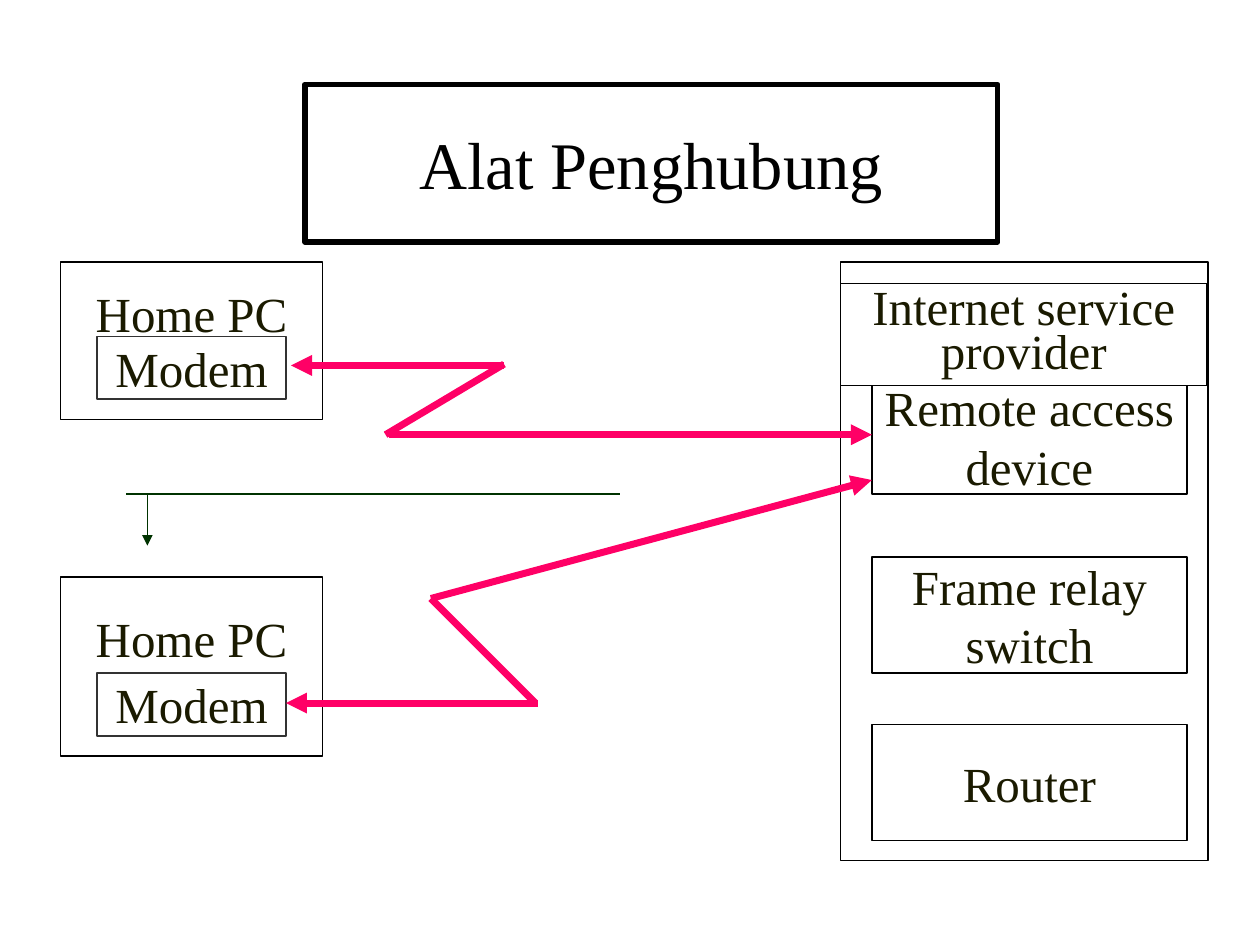
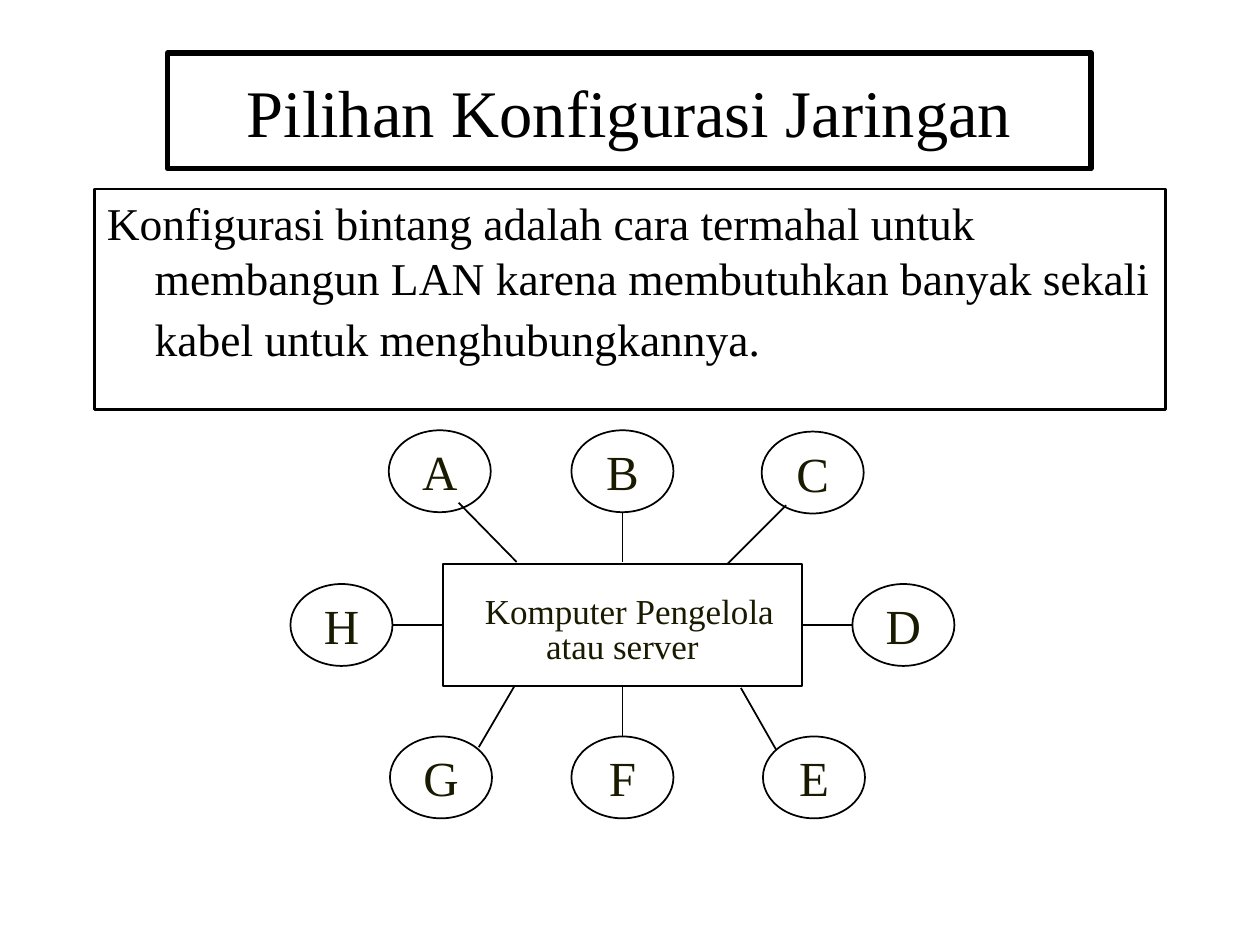
import pptx
import pptx.util
import pptx.dml.color
import pptx.enum.shapes
import pptx.enum.text
import lxml.etree
from pptx.oxml.ns import qn

FONT = "Times New Roman"
BLACK, WHITE, INK, GREY, GREEN, PINK = (
    "000000", "FFFFFF", "1A1A00", "333333", "003300", "FF0066")
RECT = pptx.enum.shapes.MSO_SHAPE.RECTANGLE
OVAL = pptx.enum.shapes.MSO_SHAPE.OVAL
LEFT, CENTER = pptx.enum.text.PP_ALIGN.LEFT, pptx.enum.text.PP_ALIGN.CENTER
TOP, MIDDLE = pptx.enum.text.MSO_ANCHOR.TOP, pptx.enum.text.MSO_ANCHOR.MIDDLE
LABEL_SIZE = 28
LINE_HEIGHT = 0.45  # one label line, in inches

# Slide 1: devices that connect home computers to a provider
DEVICES_TITLE = ("Alat Penghubung", (2.42, 0.67, 5.5, 1.25))
HOME_PCS = [(2.08, 1.25), (4.58, 1.42)]  # top, height
PC_LEFT, PC_WIDTH = 0.48, 2.08
MODEM_WIDTH, MODEM_HEIGHT, MODEM_GAP = 1.5, 0.5, 0.16
PROVIDER_FRAME = (6.67, 2.08, 2.92, 4.75)
PROVIDER_NAME = ("Internet service provider", (6.67, 2.25, 2.91, 0.81))
PROVIDER_DEVICES = [
    (3.0, ["Remote access", "device"]),
    (4.42, ["Frame relay", "switch"]),
    (5.75, ["Router"]),
]
DEVICE_LEFT, DEVICE_WIDTH, DEVICE_HEIGHT = 6.92, 2.5, 0.92
BUS = [((1, 3.92), (4.92, 3.92), None), ((1.17, 3.92), (1.17, 4.33), "tail")]
LINKS = [  # start, end, arrowhead
    ((2.31, 2.9), (4.0, 2.9), "head"),
    ((3.06, 3.45), (4.0, 2.89), None),
    ((3.09, 3.45), (DEVICE_LEFT, 3.45), "tail"),
    ((2.27, 5.58), (4.27, 5.58), "head"),
    ((3.42, 4.75), (4.25, 5.58), None),
    ((3.42, 4.75), (DEVICE_LEFT, 3.81), "tail"),
]

# Slide 2: star network
STAR_TITLE = ("Pilihan Konfigurasi Jaringan", (1.33, 0.42, 7.33, 0.92))
STAR_TEXT = [[
    ("Konfigurasi bintang adalah cara termahal untuk membangun LAN karena "
     "membutuhkan banyak sekali kabel untuk menghubungkannya.", 26),
    (" ", 30),
]]
STAR_TEXT_AREA = (0.75, 1.5, 8.5, 1.75)
SERVER_TEXT = [[(" ", 32), ("Komputer Pengelola", 20)], [("atau server", 20)]]
HUB = (4.94, 4.96)
SERVER_SIZE, NODE_SIZE = (2.85, 0.97), (0.81, 0.65)
STAR = {  # offset of node from hub, spoke start and end as offsets from hub
    "A": ((-1.45, -1.22), (-0.84, -0.5), (-1.3, -0.97)),
    "B": ((0, -1.22), (0, -0.5), (0, -0.9)),
    "C": ((1.51, -1.21), (0.83, -0.48), (1.3, -0.95)),
    "D": ((2.23, 0), (1.43, 0), (1.83, 0)),
    "E": ((1.52, 1.21), (0.94, 0.5), (1.22, 0.99)),
    "F": ((0, 1.21), (0, 0.49), (0, 0.89)),
    "G": ((-1.44, 1.21), (-0.86, 0.49), (-1.14, 0.97)),
    "H": ((-2.23, 0), (-1.42, 0), (-1.82, 0)),
}


def color(value):
    return pptx.dml.color.RGBColor.from_string(value)


def inches(values):
    return [pptx.util.Inches(value) for value in values]


def add_box(shapes, area, lines=(), kind=RECT, fill=WHITE, line=BLACK, weight=1,
            size=LABEL_SIZE, ink=INK, align=CENTER, anchor=MIDDLE, wrap=False,
            spacing=None, hanging=0, bottom=0.05):
    """Add an outlined shape; each line is a string or a list of (text, size)."""
    box = shapes.add_shape(kind, *inches(area))
    box.shadow.inherit = False
    if fill:
        box.fill.solid()
        box.fill.fore_color.rgb = color(fill)
    else:
        box.fill.background()
    box.line.color.rgb = color(line)
    box.line.width = pptx.util.Pt(weight)

    frame = box.text_frame
    frame.word_wrap = wrap
    frame.vertical_anchor = anchor
    frame.margin_bottom = pptx.util.Inches(bottom)
    for index, content in enumerate(lines):
        para = frame.add_paragraph() if index else frame.paragraphs[0]
        para.alignment = align
        para.line_spacing = spacing
        para.font.name = FONT
        para.font.color.rgb = color(ink)
        if hanging:
            indent = pptx.util.Inches(hanging)
            para._p.get_or_add_pPr().set("marL", str(indent))
            para._p.get_or_add_pPr().set("indent", str(-indent))
        for text, points in [(content, size)] if isinstance(content, str) else content:
            span = para.add_run()
            span.text = text
            span.font.size = pptx.util.Pt(points)
    return box


def add_line(shapes, start, end, line=BLACK, weight=1, arrow=None):
    """Draw a straight line; arrow is None, "head" (at start) or "tail" (at end)."""
    link = shapes.add_connector(
        pptx.enum.shapes.MSO_CONNECTOR.STRAIGHT, *inches(start + end))
    link.line.color.rgb = color(line)
    link.line.width = pptx.util.Pt(weight)
    properties = link._element.spPr
    if arrow:
        outline = properties.find(qn("a:ln"))
        lxml.etree.SubElement(outline, qn(f"a:{arrow}End"), type="triangle")
    lxml.etree.SubElement(properties, qn("a:effectLst"))


def add_page(deck, title, area):
    page = deck.slides.add_slide(deck.slide_layouts[6])
    add_box(page.shapes, area, [title], fill=None, weight=3, size=38, ink=BLACK,
            wrap=True)
    return page


def centered(center, size):
    """Return the area of the given size around a center."""
    return (center[0] - size[0] / 2, center[1] - size[1] / 2) + size


def from_hub(offset):
    return (HUB[0] + offset[0], HUB[1] + offset[1])


def build_devices(deck):
    shapes = add_page(deck, *DEVICES_TITLE).shapes
    modem_left = PC_LEFT + (PC_WIDTH - MODEM_WIDTH) / 2
    for top, height in HOME_PCS:
        add_box(shapes, (PC_LEFT, top, PC_WIDTH, height), ["Home PC"],
                bottom=0.05 + LINE_HEIGHT)
        modem_top = top + height - MODEM_GAP - MODEM_HEIGHT
        add_box(shapes, (modem_left, modem_top, MODEM_WIDTH, MODEM_HEIGHT),
                ["Modem"], line=GREY)
    for start, end, arrow in BUS:
        add_line(shapes, start, end, GREEN, arrow=arrow)
    add_box(shapes, PROVIDER_FRAME)
    for top, lines in PROVIDER_DEVICES:
        add_box(shapes, (DEVICE_LEFT, top, DEVICE_WIDTH, DEVICE_HEIGHT), lines)
    name, area = PROVIDER_NAME
    add_box(shapes, area, [name], anchor=TOP, wrap=True, spacing=0.75)
    for start, end, arrow in LINKS:
        add_line(shapes, start, end, PINK, 4, arrow)


def build_star(deck):
    page = add_page(deck, *STAR_TITLE)
    add_box(page.shapes, STAR_TEXT_AREA, STAR_TEXT, fill=None, weight=1.5,
            ink=BLACK, align=LEFT, anchor=TOP, wrap=True, hanging=0.38)
    star = page.shapes.add_group_shape().shapes
    add_box(star, centered(HUB, SERVER_SIZE), SERVER_TEXT, spacing=0.75)
    for name, (offset, start, end) in STAR.items():
        add_box(star, centered(from_hub(offset), NODE_SIZE), [name], OVAL)
        add_line(star, from_hub(start), from_hub(end))


def main():
    deck = pptx.Presentation()
    deck.slide_width, deck.slide_height = inches((10, 7.5))
    build_devices(deck)
    build_star(deck)
    deck.save("out.pptx")


if __name__ == "__main__":
    main()
